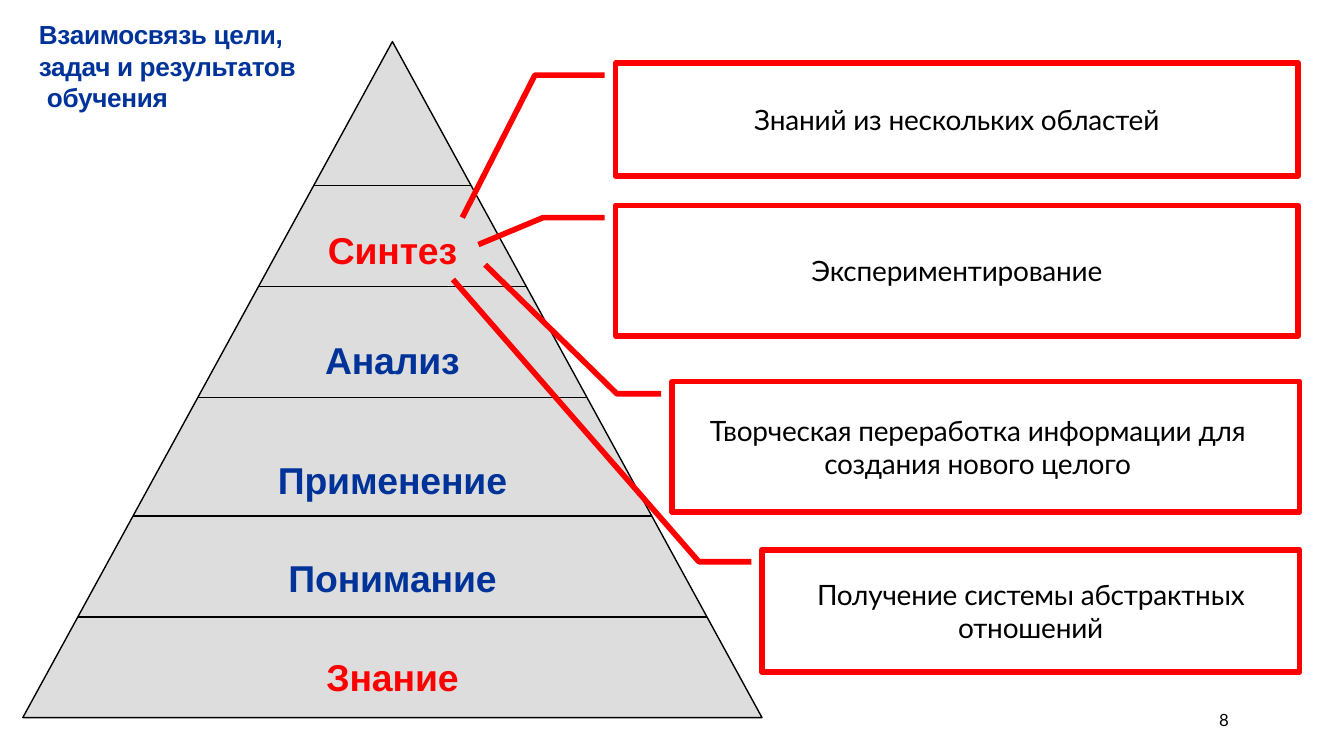
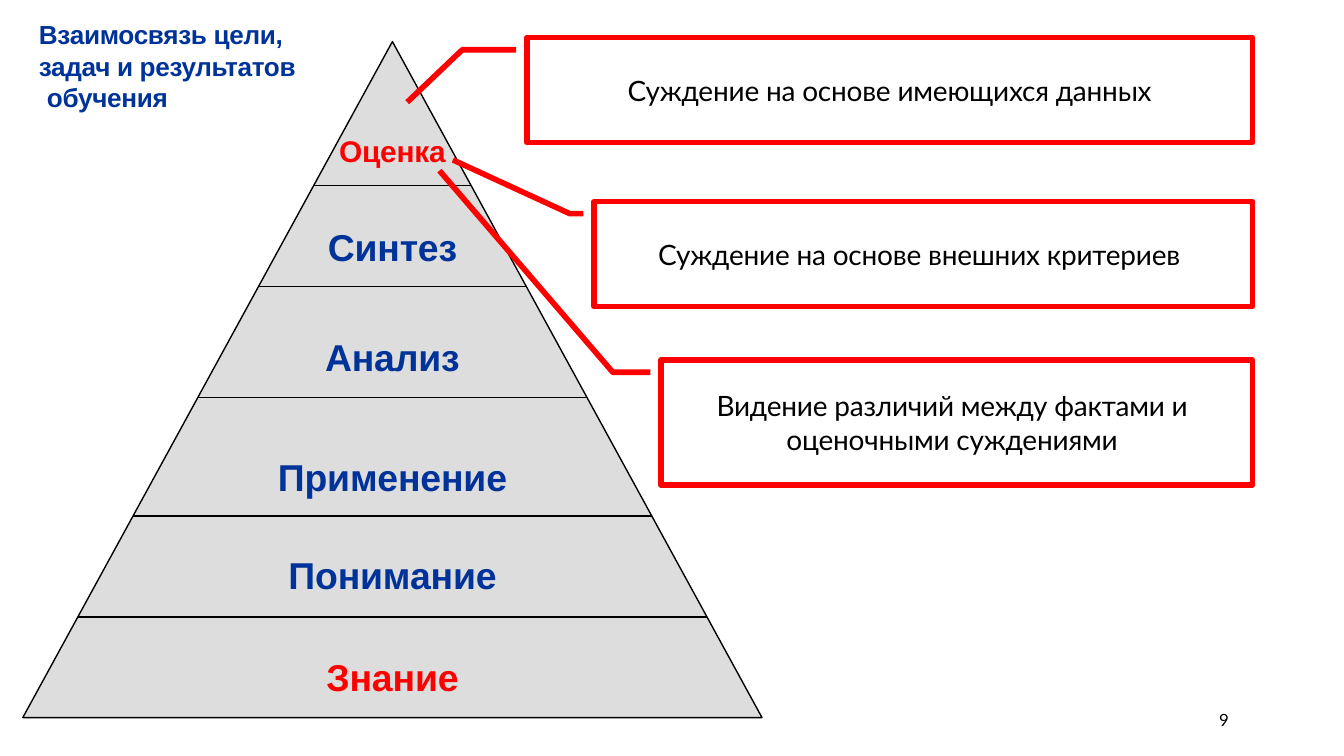
from dataclasses import dataclass

from lxml import etree
from pptx import Presentation
from pptx.dml.color import RGBColor
from pptx.enum.shapes import MSO_CONNECTOR, MSO_SHAPE
from pptx.enum.text import MSO_ANCHOR, PP_ALIGN
from pptx.oxml.ns import qn
from pptx.util import Emu, Pt

# Scale, colours and fonts
PX = 9144  # 100 px to the inch
SLIDE_WIDTH = 1000
SLIDE_HEIGHT = SLIDE_WIDTH * 9 / 16
BLUE, RED, GREY, WHITE, BLACK = "003399", "FF0000", "DDDDDD", "FFFFFF", "000000"
HEADING_FONT, BODY_FONT = "Arial", "Lato"

TRIANGLE, RECTANGLE = MSO_SHAPE.ISOSCELES_TRIANGLE, MSO_SHAPE.RECTANGLE
STRAIGHT = MSO_CONNECTOR.STRAIGHT
LEFT, CENTER = PP_ALIGN.LEFT, PP_ALIGN.CENTER
TOP, MIDDLE = MSO_ANCHOR.TOP, MSO_ANCHOR.MIDDLE

# Pyramid geometry
APEX_X, APEX_Y = 292, 31
PYRAMID_WIDTH, PYRAMID_HEIGHT = 550, 503
LEVEL_LINES = (138, 213, 296, 384, 459)

# Callout leader: gap to the box and drop below its top edge
LEADER_GAP, LEADER_DROP = 8, 9

TITLE = "Взаимосвязь цели, задач и результатов\nобучения"


@dataclass(frozen=True)
class Level:
    text: str
    top: int
    width: int
    color: str = BLUE
    size: int = 20
    height: int = 36


@dataclass(frozen=True)
class Callout:
    text: str
    left: int
    top: int
    width: int
    height: int
    elbow_x: int
    target: tuple[int, int]
    right_inset: int = 0


@dataclass(frozen=True)
class PyramidSlide:
    number: int
    levels: tuple[Level, ...]
    callouts: tuple[Callout, ...]


KNOWLEDGE = Level("Знание", 485, 102, RED, height=34)


def middle_levels(shift: int, synthesis_color: str) -> tuple[Level, ...]:
    """Levels that both slides show, moved down by shift."""
    return (
        Level("Синтез", 165 + shift, 99, synthesis_color),
        Level("Анализ", 247 + shift, 104),
        Level("Применение", 336 + shift, 175),
        Level("Понимание", 409 + shift, 159),
        KNOWLEDGE,
    )


SLIDES = (
    PyramidSlide(
        8,
        middle_levels(2, RED),
        (
            Callout("Знаний из нескольких областей", 458, 47, 508, 84, 398, (344, 162)),
            Callout("Экспериментирование", 458, 153, 508, 97, 404, (356, 182)),
            Callout("Творческая переработка информации для создания нового целого",
                    500, 284, 467, 97, 459, (361, 197), right_inset=12),
            Callout("Получение системы абстрактных отношений",
                    567, 409, 400, 91, 520, (337, 208)),
        ),
    ),
    PyramidSlide(
        9,
        (Level("Оценка", 97, 83, RED, 16, 29),) + middle_levels(0, BLUE),
        (
            Callout("Суждение на основе имеющихся данных",
                    392, 28, 540, 78, 344, (303, 76)),
            Callout("Суждение на основе внешних критериев",
                    442, 150, 490, 78, 424, (337, 119), right_inset=6),
            Callout("Видение различий между фактами и оценочными суждениями",
                    492, 268, 440, 93, 456, (327, 127), right_inset=7),
        ),
    ),
)


def px(value: float) -> Emu:
    return Emu(round(value * PX))


def rgb(color: str) -> RGBColor:
    return RGBColor.from_string(color)


def style_shape(shape, *, line: str, width: float, fill: str | None = None) -> None:
    shape.shadow.inherit = False
    if fill is None:
        shape.fill.background()
    else:
        shape.fill.solid()
        shape.fill.fore_color.rgb = rgb(fill)
    shape.line.color.rgb = rgb(line)
    shape.line.width = Pt(width)


def write_text(shape, text: str, *, font: str, size: int, color: str = BLACK,
               bold: bool = False, align=LEFT, anchor=TOP, wrap: bool = True,
               insets: tuple[int, int, int, int] = (0, 2, 0, 0),
               tracking: float = -0.1, last_indent: int = 0) -> None:
    """Fill a shape with text; insets run left, top, right, bottom in px."""
    frame = shape.text_frame
    frame.word_wrap = wrap
    frame.vertical_anchor = anchor
    (frame.margin_left, frame.margin_top,
     frame.margin_right, frame.margin_bottom) = map(px, insets)
    frame.text = text
    for paragraph in frame.paragraphs:
        paragraph.alignment = align
        for run in paragraph.runs:
            run.font.name = font
            run.font.size = Pt(size)
            run.font.bold = bold
            run.font.color.rgb = rgb(color)
            run.font._element.set("spc", str(round(tracking * 100)))
    if last_indent:
        properties = frame.paragraphs[-1]._p.get_or_add_pPr()
        properties.set("marL", str(px(last_indent)))


def add_text(slide, text: str, left: float, top: int, width: int, height: int,
             **text_format) -> None:
    box = slide.shapes.add_textbox(px(left), px(top), px(width), px(height))
    write_text(box, text, **text_format)


def add_pyramid(slide) -> None:
    pyramid = slide.shapes.add_shape(
        TRIANGLE, px(APEX_X - PYRAMID_WIDTH / 2), px(APEX_Y),
        px(PYRAMID_WIDTH), px(PYRAMID_HEIGHT))
    style_shape(pyramid, fill=GREY, line=BLACK, width=0.75)
    for y in LEVEL_LINES:
        half = (y - APEX_Y) / PYRAMID_HEIGHT * PYRAMID_WIDTH / 2
        divider = slide.shapes.add_connector(
            STRAIGHT, px(APEX_X - half), px(y), px(APEX_X + half), px(y))
        divider.line.color.rgb = rgb(BLACK)
        divider.line.width = Pt(0.75)
        etree.SubElement(divider._element.spPr, qn("a:effectLst"))


def add_level(slide, level: Level) -> None:
    add_text(slide, level.text, APEX_X - level.width / 2, level.top,
             level.width, level.height, font=HEADING_FONT, size=level.size,
             color=level.color, bold=True, align=CENTER, wrap=False)


def add_callout(slide, callout: Callout) -> None:
    box = slide.shapes.add_shape(RECTANGLE, px(callout.left), px(callout.top),
                                 px(callout.width), px(callout.height))
    style_shape(box, fill=WHITE, line=RED, width=3)
    write_text(box, callout.text, font=BODY_FONT, size=15, align=CENTER,
               anchor=MIDDLE, insets=(0, 0, callout.right_inset, 0))

    leader_y = callout.top + LEADER_DROP
    builder = slide.shapes.build_freeform(
        callout.left - LEADER_GAP, leader_y, scale=PX)
    builder.add_line_segments(
        [(callout.elbow_x, leader_y), callout.target], close=False)
    style_shape(builder.convert_to_shape(), line=RED, width=3)


def add_pyramid_slide(presentation, content: PyramidSlide) -> None:
    slide = presentation.slides.add_slide(presentation.slide_layouts[6])
    add_pyramid(slide)
    for level in content.levels:
        add_level(slide, level)
    for callout in content.callouts:
        add_callout(slide, callout)
    # Slide number and title
    add_text(slide, str(content.number), 903, 528, 22, 17,
             font=BODY_FONT, size=9, insets=(4, 0, 0, 0))
    add_text(slide, TITLE, 29, 13, 200, 73, font=HEADING_FONT, size=14,
             color=BLUE, bold=True, insets=(0, 1, 0, 0), tracking=-0.2,
             last_indent=6)


def main() -> None:
    presentation = Presentation()
    presentation.slide_width = px(SLIDE_WIDTH)
    presentation.slide_height = px(SLIDE_HEIGHT)
    for content in SLIDES:
        add_pyramid_slide(presentation, content)
    presentation.save("out.pptx")


if __name__ == "__main__":
    main()
